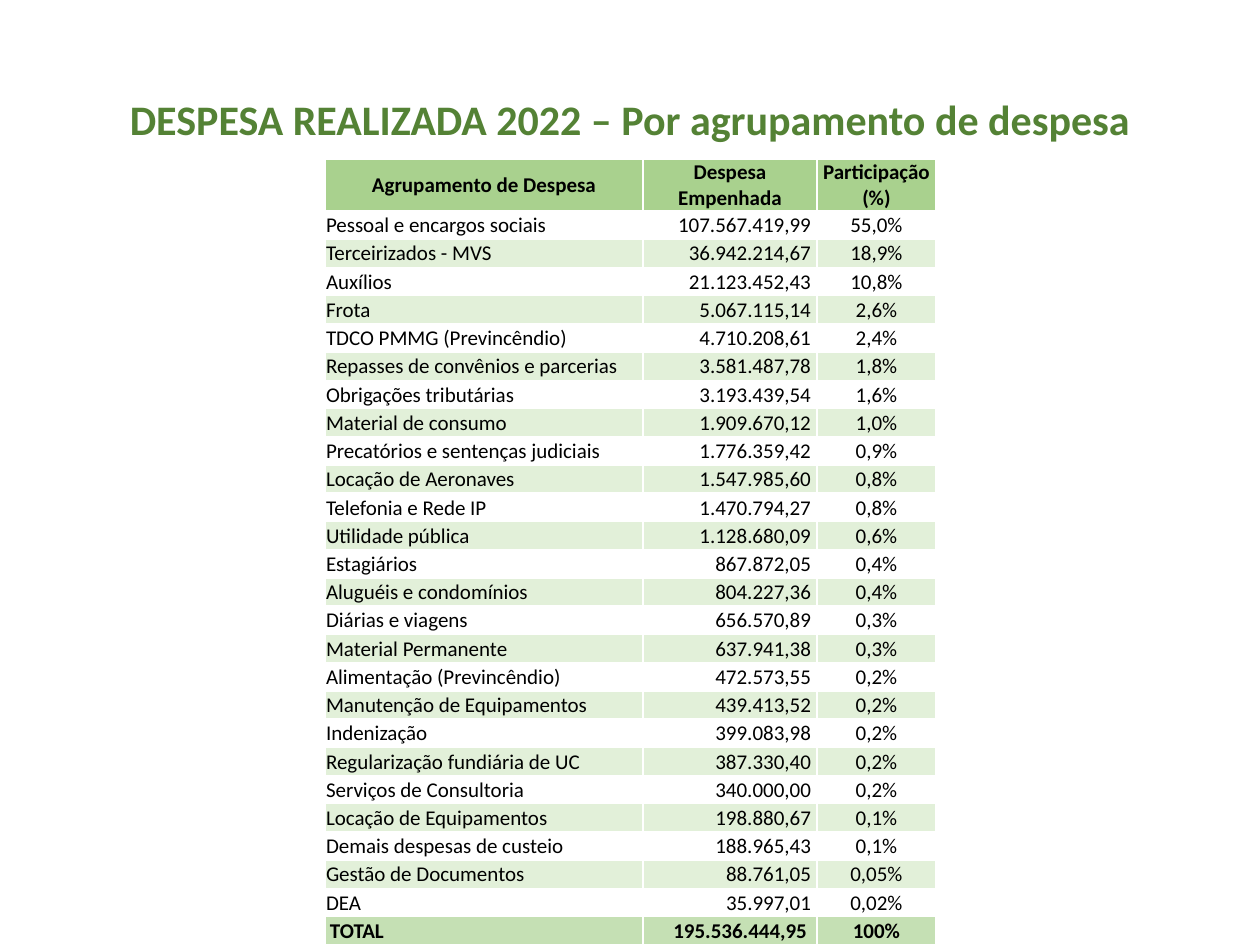
import pptx
import pptx.dml.color
import pptx.enum.text
import pptx.oxml
import pptx.oxml.ns
import pptx.util

PX = 914400 / 126
ALIGN = pptx.enum.text.PP_ALIGN
MIDDLE = pptx.enum.text.MSO_ANCHOR.MIDDLE
COLORS = {
    "title": "548235",
    "text": "000000",
    "header": "A9D18E",
    "odd": "FFFFFF",
    "even": "E2F0D9",
    "total": "C5E0B4",
    "border": "FFFFFF",
}
COLUMN_WIDTHS = (318, 174, 119)
COLUMN_ALIGNS = (ALIGN.LEFT, ALIGN.RIGHT, ALIGN.CENTER)
TABLE_LEFT, TABLE_TOP, TABLE_HEIGHT, HEADER_HEIGHT = 325, 159, 787, 52

HEADER = ("Agrupamento de Despesa", "Despesa Empenhada", "Participação (%)")
EXPENSES = (
    ("Pessoal e encargos sociais", "107.567.419,99", "55,0%"),
    ("Terceirizados - MVS", "36.942.214,67", "18,9%"),
    ("Auxílios", "21.123.452,43", "10,8%"),
    ("Frota", "5.067.115,14", "2,6%"),
    ("TDCO PMMG (Previncêndio)", "4.710.208,61", "2,4%"),
    ("Repasses de convênios e parcerias", "3.581.487,78", "1,8%"),
    ("Obrigações tributárias", "3.193.439,54", "1,6%"),
    ("Material de consumo", "1.909.670,12", "1,0%"),
    ("Precatórios e sentenças judiciais", "1.776.359,42", "0,9%"),
    ("Locação de Aeronaves", "1.547.985,60", "0,8%"),
    ("Telefonia e Rede IP", "1.470.794,27", "0,8%"),
    ("Utilidade pública", "1.128.680,09", "0,6%"),
    ("Estagiários", "867.872,05", "0,4%"),
    ("Aluguéis e condomínios", "804.227,36", "0,4%"),
    ("Diárias e viagens", "656.570,89", "0,3%"),
    ("Material Permanente", "637.941,38", "0,3%"),
    ("Alimentação (Previncêndio)", "472.573,55", "0,2%"),
    ("Manutenção de Equipamentos", "439.413,52", "0,2%"),
    ("Indenização", "399.083,98", "0,2%"),
    ("Regularização fundiária de UC", "387.330,40", "0,2%"),
    ("Serviços de Consultoria", "340.000,00", "0,2%"),
    ("Locação de Equipamentos", "198.880,67", "0,1%"),
    ("Demais despesas de custeio", "188.965,43", "0,1%"),
    ("Gestão de Documentos", "88.761,05", "0,05%"),
    ("DEA", "35.997,01", "0,02%"),
)
TOTAL = ("TOTAL", "195.536.444,95", "100%")


def px(length):
    return pptx.util.Emu(round(length * PX))


def rgb(name):
    return pptx.dml.color.RGBColor.from_string(COLORS[name])


def set_attributes(target, values):
    for name, value in values.items():
        setattr(target, name, value)


def write(frame, text, align, size, color, bold):
    para = frame.paragraphs[0]
    para.alignment = align
    span = para.add_run()
    span.text = text
    set_attributes(span.font, {"name": "Calibri", "size": pptx.util.Pt(size), "bold": bold})
    span.font.color.rgb = rgb(color)
    return para


def add_title(page, text):
    box = page.shapes.add_textbox(px(63), px(72), px(1134), px(100))
    set_attributes(box.text_frame, {"word_wrap": True, "vertical_anchor": MIDDLE})
    para = write(box.text_frame, text, ALIGN.CENTER, 24, "title", True)
    para.line_spacing = 0.9


def add_borders(cell):
    properties = cell._tc.get_or_add_tcPr()
    for side in ("lnL", "lnR", "lnT", "lnB"):
        properties.append(pptx.oxml.parse_xml(
            f'<a:{side} {pptx.oxml.ns.nsdecls("a")} w="{pptx.util.Pt(1)}"><a:solidFill>'
            f'<a:srgbClr val="{COLORS["border"]}"/></a:solidFill></a:{side}>'))


def fill_row(cells, texts, aligns, color, bold, left_margin=1, right_margin=6):
    """Write one row; the outer margins apply to the left- and right-aligned cells."""
    for cell, text, align in zip(cells, texts, aligns):
        set_attributes(cell, {
            "vertical_anchor": MIDDLE,
            "margin_left": px(left_margin if align == ALIGN.LEFT else 1),
            "margin_right": px(right_margin if align == ALIGN.RIGHT else 1),
            "margin_top": px(1),
            "margin_bottom": 0,
        })
        add_borders(cell)
        cell.fill.solid()
        cell.fill.fore_color.rgb = rgb(color)
        write(cell.text_frame, text, align, 12, "text", bold)


def add_expense_table(page):
    row_count = len(EXPENSES) + 2
    frame = page.shapes.add_table(
        row_count, len(HEADER), px(TABLE_LEFT), px(TABLE_TOP),
        px(sum(COLUMN_WIDTHS)), px(TABLE_HEIGHT))
    table = frame.table
    for column, width in zip(table.columns, COLUMN_WIDTHS):
        column.width = px(width)
    for row in table.rows:
        row.height = px((TABLE_HEIGHT - HEADER_HEIGHT) / (row_count - 1))
    table.rows[0].height = px(HEADER_HEIGHT)

    header, *body, total = [row.cells for row in table.rows]
    fill_row(header, HEADER, (ALIGN.CENTER,) * len(HEADER), "header", True)
    for index, (cells, expense) in enumerate(zip(body, EXPENSES)):
        fill_row(cells, expense, COLUMN_ALIGNS, "even" if index % 2 else "odd", False)
    fill_row(total, TOTAL, COLUMN_ALIGNS, "total", True, left_margin=5, right_margin=10)


def main():
    deck = pptx.Presentation()
    set_attributes(deck, {"slide_width": px(1260), "slide_height": px(945)})
    page = deck.slides.add_slide(deck.slide_layouts[6])
    add_title(page, "DESPESA REALIZADA 2022 – Por agrupamento de despesa")
    add_expense_table(page)
    deck.save("out.pptx")


if __name__ == "__main__":
    main()
